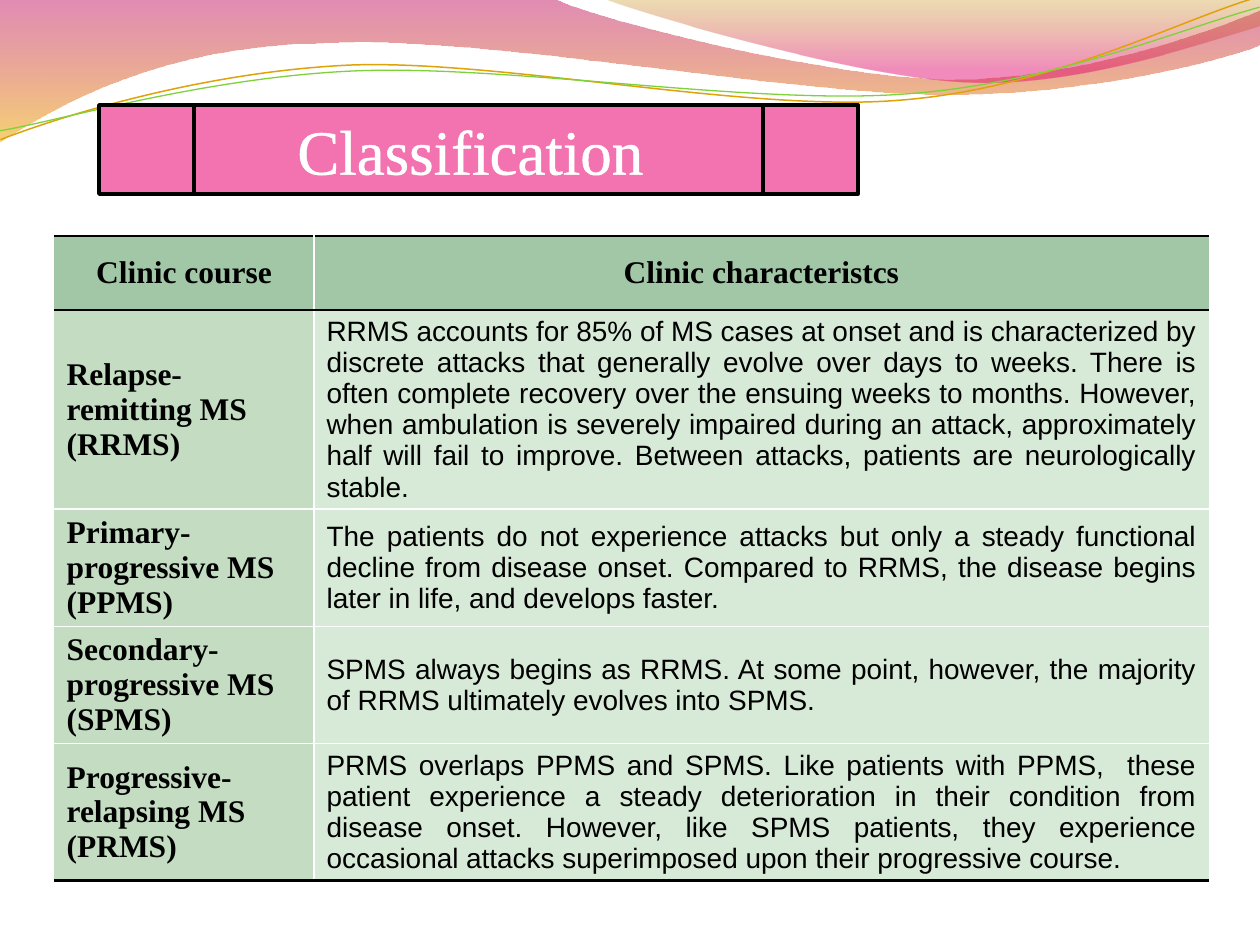
import lxml.etree
import pptx
import pptx.dml.color
import pptx.enum.shapes
import pptx.enum.text
import pptx.oxml
import pptx.oxml.ns
import pptx.util

PX = 914400 / 126
SERIF, SANS = "Times New Roman", "Arial"
BLACK, WHITE = "000000", "FFFFFF"
NO_STYLE = "{2D5ABB26-0587-4C30-8999-92F81FD0307C}"
ALIGN = pptx.enum.text.PP_ALIGN
MIDDLE = pptx.enum.text.MSO_ANCHOR.MIDDLE

# Each step after the start is a line end (one point) or a Bézier curve (three).
WAVES = [
    {"steps": [[(0, 0)], [(554, -1)],
               [(600, 21), (837, 79), (955, 79)], [(1075, 79), (1207, 33), (1260, 11)],
               [(1261, 45)],
               [(1239, 55), (1096, 96), (940, 94)], [(784, 94), (481, 35), (324, 43)],
               [(163, 45), (58, 105), (-1, 142)]],
     "stops": [(0, "BD0059", 45), (100, "F0AB00", 55)]},
    {"steps": [[(604, -1)],
               [(641, 14), (859, 78), (969, 82)], [(1079, 87), (1211, 40), (1260, 26)],
               [(1260, 0)]],
     "stops": [(0, "C38B00", 30), (80, "E1006B", 45)]},
    {"steps": [[(-2, 110)],
               [(58, 90), (200, 52), (350, 52)], [(499, 53), (745, 118), (896, 113)],
               [(1049, 109), (1184, 45), (1260, 27)]],
     "line": ("E0A209", 0.85), "rotation": 357.3},
    {"steps": [[(-2, 101)],
               [(58, 94), (207, 57), (357, 58)], [(508, 59), (751, 111), (902, 107)],
               [(1052, 104), (1188, 53), (1262, 37)]],
     "line": ("7FD13B", 0.75), "rotation": 357.3},
]

TITLE = "Classification "
TITLE_BOX = (99, 105, 759, 89)

HEADER = ["Clinic course", "Clinic characteristcs"]
COURSES = [
    ("Relapse-remitting MS", "(RRMS)",
     "RRMS accounts for 85% of MS cases at onset and is characterized by discrete attacks "
     "that generally evolve over days to weeks. There is often complete recovery over the "
     "ensuing weeks to months. However, when ambulation is severely impaired during an "
     "attack, approximately half will fail to improve. Between attacks, patients are "
     "neurologically stable."),
    ("Primary-progressive MS", "(PPMS)",
     "The patients do not experience attacks but only a steady functional decline from "
     "disease onset. Compared to RRMS, the disease begins later in life, and develops faster."),
    ("Secondary-progressive MS", "(SPMS)",
     "SPMS always begins as RRMS. At some point, however, the majority of RRMS ultimately "
     "evolves into SPMS. "),
    ("Progressive-relapsing MS", "(PRMS)",
     "PRMS overlaps PPMS and SPMS. Like patients with PPMS,  these patient experience a "
     "steady deterioration in their condition from disease onset. However, like SPMS "
     "patients, they experience occasional attacks superimposed upon their progressive course."),
]
TABLE_AT = (54, 236)
COLUMNS = [260, 895]
ROWS = [74, 106, 106, 111, 69]  # least heights: rows grow with their text
ROW_EDGES = [(BLACK, 1), (BLACK, 1), (WHITE, 1), (WHITE, 1), (WHITE, 1), (BLACK, 2)]

HEAD_FONT = {"name": SERIF, "size": 18, "bold": True, "color": BLACK}
BODY_FONT = {"name": SANS, "size": 16, "bold": False, "color": BLACK}
TITLE_FONT = {"name": SERIF, "size": 36, "color": WHITE}


def rgb(value):
    return pptx.dml.color.RGBColor.from_string(value)


def px(*values):
    return [round(v * PX) for v in values]


def line_xml(tag, color, width):
    return pptx.oxml.parse_xml(
        f'<a:{tag} {pptx.oxml.ns.nsdecls("a")} w="{pptx.util.Pt(width)}">'
        f'<a:solidFill><a:srgbClr val="{color}"/></a:solidFill></a:{tag}>')


def write(tf, lines, font, align):
    for i, text in enumerate(lines):
        p = tf.paragraphs[0] if i == 0 else tf.add_paragraph()
        p.alignment = align
        r = p.add_run()
        r.text = text
        for key, value in font.items():
            if key == "color":
                r.font.color.rgb = rgb(value)
            else:
                setattr(r.font, key, pptx.util.Pt(value) if key == "size" else value)


def set_line(sp, color, width):
    sp.line.color.rgb = rgb(color)
    sp.line.width = pptx.util.Pt(width)


def bend(sp, steps):
    """Join the three line ends of each curved step into one Bézier curve."""
    qn = pptx.oxml.ns.qn
    ends = iter(list(sp._element.spPr.iter(qn("a:lnTo"))))
    for step in steps:
        group = [next(ends) for _ in step]
        if len(group) == 3:
            curve = lxml.etree.Element(qn("a:cubicBezTo"))
            group[0].addprevious(curve)
            for end in group:
                curve.append(end[0])
                end.getparent().remove(end)


def gradient(sp, stops):
    """Fill from top to bottom with see-through stops (position, colour, opacity)."""
    sp.fill.background()
    no_fill = sp._element.spPr.find(pptx.oxml.ns.qn("a:noFill"))
    gs = "".join(f'<a:gs pos="{pos * 1000}"><a:srgbClr val="{color}">'
                 f'<a:alpha val="{alpha * 1000}"/></a:srgbClr></a:gs>'
                 for pos, color, alpha in stops)
    fill = pptx.oxml.parse_xml(f'<a:gradFill {pptx.oxml.ns.nsdecls("a")}><a:gsLst>{gs}'
                               '</a:gsLst><a:lin ang="5400000" scaled="0"/></a:gradFill>')
    no_fill.getparent().replace(no_fill, fill)


def add_wave(s, wave):
    start, *steps = wave["steps"]
    builder = s.shapes.build_freeform(*px(*start[0]), scale=1.0)
    builder.add_line_segments([px(*point) for step in steps for point in step],
                              close="stops" in wave)
    sp = builder.convert_to_shape()
    bend(sp, steps)
    sp.shadow.inherit = False
    sp.rotation = wave.get("rotation", 0)
    if "stops" in wave:
        gradient(sp, wave["stops"])
        sp.line.fill.background()
    else:
        sp.fill.background()
        set_line(sp, *wave["line"])


def set_borders(cell, edges):
    tc_pr = cell._tc.get_or_add_tcPr()
    for i, (side, edge) in enumerate(edges.items()):
        tc_pr.insert(i, line_xml("ln" + side, *edge))


def add_courses(s):
    rows = [[[text] for text in HEADER]]
    rows += [[[name, short], [about]] for name, short, about in COURSES]
    table = s.shapes.add_table(len(ROWS), len(COLUMNS),
                               *px(*TABLE_AT, sum(COLUMNS), sum(ROWS))).table
    table.horz_banding = False
    table._tbl.tblPr.find(pptx.oxml.ns.qn("a:tableStyleId")).text = NO_STYLE
    for column, width in zip(table.columns, px(*COLUMNS)):
        column.width = width
    for row, height in zip(table.rows, px(*ROWS)):
        row.height = height
    for i, row in enumerate(rows):
        for j, lines in enumerate(row):
            cell = table.cell(i, j)
            cell.vertical_anchor = MIDDLE
            cell.fill.solid()
            cell.fill.fore_color.rgb = rgb("A1C7A6" if i == 0 else ("C3DCC2", "D7E9D7")[j])
            write(cell.text_frame, lines, BODY_FONT if i and j else HEAD_FONT,
                  ALIGN.JUSTIFY if i else ALIGN.CENTER)
            set_borders(cell, {"L" if j else "R": (WHITE, 1),
                               "T": ROW_EDGES[i], "B": ROW_EDGES[i + 1]})


def add_title(s):
    sp = s.shapes.add_shape(
        pptx.enum.shapes.MSO_SHAPE.FLOWCHART_PREDEFINED_PROCESS, *px(*TITLE_BOX))
    sp.shadow.inherit = False
    sp.fill.solid()
    sp.fill.fore_color.rgb = rgb("F273AF")
    set_line(sp, BLACK, 2)
    tf = sp.text_frame
    tf.word_wrap = False
    tf.vertical_anchor = MIDDLE
    write(tf, [TITLE], TITLE_FONT, ALIGN.CENTER)
    tf.paragraphs[0].runs[0]._r.get_or_add_rPr().insert(0, line_xml("ln", WHITE, 1.45))


def main():
    prs = pptx.Presentation()
    prs.slide_width, prs.slide_height = px(1260, 945)
    s = prs.slides.add_slide(prs.slide_layouts[6])
    for wave in WAVES:
        add_wave(s, wave)
    add_courses(s)
    add_title(s)
    prs.save("out.pptx")


if __name__ == "__main__":
    main()
